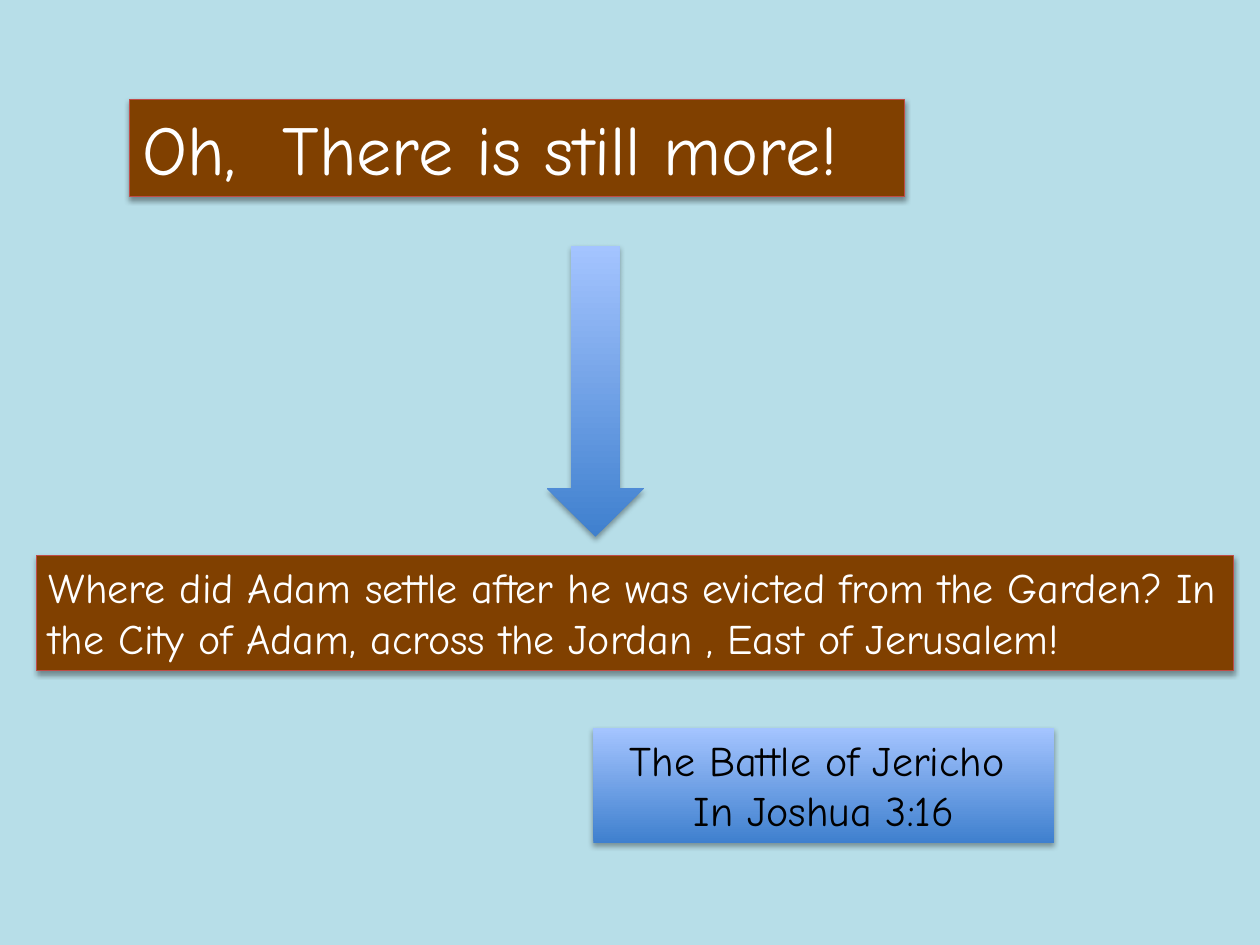
from lxml import etree
from pptx import Presentation
from pptx.dml.color import RGBColor
from pptx.enum.shapes import MSO_SHAPE
from pptx.enum.text import MSO_ANCHOR, PP_ALIGN
from pptx.oxml.ns import qn
from pptx.util import Inches, Pt

RECTANGLE = MSO_SHAPE.RECTANGLE
DOWN_ARROW = MSO_SHAPE.DOWN_ARROW
LEFT, CENTER = PP_ALIGN.LEFT, PP_ALIGN.CENTER
TOP = MSO_ANCHOR.TOP

SKY = RGBColor(0xB7, 0xDE, 0xE8)
BROWN = RGBColor(0x80, 0x40, 0x00)
RED = RGBColor(0xBF, 0x4C, 0x48)
DEEP_BLUE = RGBColor(0x3F, 0x80, 0xCE)
PALE_BLUE = RGBColor(0xA4, 0xC4, 0xFF)
WHITE = RGBColor(0xFF, 0xFF, 0xFF)
BLACK = RGBColor(0x00, 0x00, 0x00)
FONT = "Comic Neue"

prs = Presentation()
prs.slide_width, prs.slide_height = Inches(10), Inches(7.5)
slide = prs.slides.add_slide(prs.slide_layouts[6])


def add_block(preset, box, fill, line=None):
    """Add a shape with a soft shadow below it; without a fill colour it gets the blue gradient."""
    block = slide.shapes.add_shape(preset, *map(Inches, box))
    if fill is None:
        block.fill.gradient()
        block.fill.gradient_angle = 90
        for stop, color in zip(block.fill.gradient_stops, (DEEP_BLUE, PALE_BLUE)):
            stop.color.rgb = color
    else:
        block.fill.solid()
        block.fill.fore_color.rgb = fill
    if line is None:
        block.line.fill.background()
        distance, opacity = Pt(1.8), 35
    else:
        block.line.color.rgb = line
        block.line.width = Pt(0.75)
        distance, opacity = Pt(1.6), 38

    block.shadow.inherit = False
    effects = block._element.spPr.find(qn("a:effectLst"))
    shadow = etree.SubElement(effects, qn("a:outerShdw"), blurRad=str(Pt(3.1)),
                              dist=str(distance), dir="5400000", rotWithShape="0")
    shadow_color = etree.SubElement(shadow, qn("a:srgbClr"), val="000000")
    etree.SubElement(shadow_color, qn("a:alpha"), val=str(opacity * 1000))
    return block


def write(block, lines, size, color, align):
    frame = block.text_frame
    frame.word_wrap = True
    frame.vertical_anchor = TOP
    frame.text = "\n".join(lines)
    for paragraph in frame.paragraphs:
        paragraph.alignment = align
        paragraph.font.name = FONT
        paragraph.font.size = Pt(size)
        paragraph.font.color.rgb = color


add_block(RECTANGLE, (0, 0, 10, 7.5), SKY)

headline = add_block(RECTANGLE, (1.03, 0.79, 6.15, 0.77), BROWN, RED)
write(headline, ["Oh,  There is still more!"], 40, WHITE, LEFT)

add_block(DOWN_ARROW, (4.34, 1.95, 0.77, 2.31), None)

answer = add_block(RECTANGLE, (0.29, 4.41, 9.5, 0.91), BROWN, RED)
write(answer, ["Where did Adam settle after he was evicted from the Garden? "
               "In the City of Adam, across the Jordan , East of Jerusalem!"],
      24, WHITE, LEFT)

reference = add_block(RECTANGLE, (4.71, 5.78, 3.66, 0.91), None)
write(reference, ["The Battle of Jericho ", "In Joshua 3:16"], 24, BLACK, CENTER)

prs.save("out.pptx")
